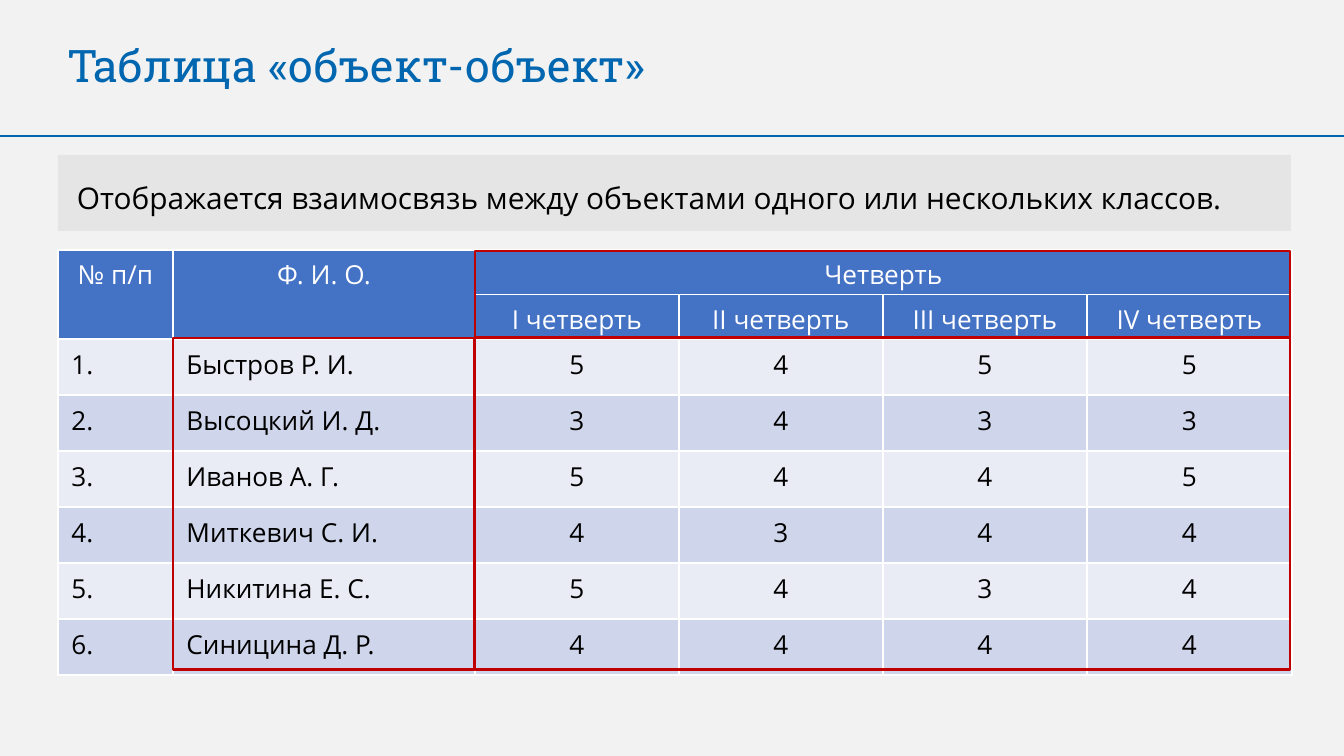
import pptx
import pptx.dml.color
import pptx.enum.shapes
import pptx.enum.text
import pptx.oxml
import pptx.oxml.ns
import pptx.util

EMU_PER_PX = 914400 / 134.4
COLORS = {
    "background": "F2F2F2",
    "accent": "0066B0",
    "note": "D9D9D9",
    "header": "4472C4",
    "odd": "E9EBF5",
    "even": "CFD5EA",
    "frame": "C00000",
    "white": "FFFFFF",
    "black": "000000",
}
ALIGN = pptx.enum.text.PP_ALIGN
RECTANGLE = pptx.enum.shapes.MSO_SHAPE.RECTANGLE


def px(*lengths):
    return [pptx.util.Emu(round(length * EMU_PER_PX)) for length in lengths]


def write(paragraph, text, font_name, size, color, align=ALIGN.LEFT):
    paragraph.text = text
    paragraph.alignment = align
    paragraph.font.name = font_name
    paragraph.font.size = pptx.util.Pt(size)
    paragraph.font.color.rgb = pptx.dml.color.RGBColor.from_string(COLORS[color])


prs = pptx.Presentation()
prs.slide_width, prs.slide_height = px(1344, 756)
slide = prs.slides.add_slide(prs.slide_layouts[5])
slide.background.fill.solid()
slide.background.fill.fore_color.rgb = pptx.dml.color.RGBColor.from_string(COLORS["background"])

title = slide.shapes.title
title.left, title.top, title.width, title.height = px(54, 31, 1236, 67)
title.text_frame.vertical_anchor = pptx.enum.text.MSO_ANCHOR.TOP
write(title.text_frame.paragraphs[0], "Таблица «объект-объект»", "Roboto Slab", 24, "accent")

divider = slide.shapes.add_connector(
    pptx.enum.shapes.MSO_CONNECTOR.STRAIGHT, *px(0, 136, 1344, 136))
divider.line.color.rgb = pptx.dml.color.RGBColor.from_string(COLORS["accent"])
divider.line.width = pptx.util.Pt(1)
divider._element.spPr.append(pptx.oxml.parse_xml(
    f'<a:effectLst {pptx.oxml.ns.nsdecls("a")}/>'))

note = slide.shapes.add_shape(RECTANGLE, *px(58, 155, 1233, 76))
note.shadow.inherit = False
note.line.fill.background()
note.fill.solid()
note.fill.fore_color.rgb = pptx.dml.color.RGBColor.from_string(COLORS["note"])
note._element.spPr.find(".//" + pptx.oxml.ns.qn("a:srgbClr")).append(
    pptx.oxml.parse_xml(f'<a:alpha {pptx.oxml.ns.nsdecls("a")} val="50000"/>'))
note_text = note.text_frame
note_text.word_wrap = True
note_text.vertical_anchor = pptx.enum.text.MSO_ANCHOR.TOP
note_text.margin_left, note_text.margin_top, note_text.margin_right, note_text.margin_bottom = px(
    19, 19, 19, 19)
write(note_text.paragraphs[0],
      "Отображается взаимосвязь между объектами одного или нескольких классов.",
      "Open Sans", 16, "black")
note_text.paragraphs[0].line_spacing = pptx.util.Pt(22)

students = [
    ("Быстров Р. И.", "5455"),
    ("Высоцкий И. Д.", "3433"),
    ("Иванов А. Г.", "5445"),
    ("Миткевич С. И.", "4344"),
    ("Никитина Е. С.", "5434"),
    ("Синицина Д. Р.", "4444"),
]
grade_rows = [
    ["№ п/п", "Ф. И. О.", "Четверть", "", "", ""],
    ["", ""] + [f"{quarter} четверть" for quarter in ("I", "II", "III", "IV")],
]
for number, (student, grades) in enumerate(students, 1):
    grade_rows.append([f"{number}.", student, *grades])

column_widths = [115, 302, 204, 204, 204, 205]
row_heights = [44] * 2 + [56] * 6
journal = slide.shapes.add_table(
    len(row_heights), len(column_widths),
    *px(58, 250, sum(column_widths), sum(row_heights))).table
for column, width in zip(journal.columns, px(*column_widths)):
    column.width = width
for row, height in zip(journal.rows, px(*row_heights)):
    row.height = height

for r, values in enumerate(grade_rows):
    is_header = r < 2
    band = "header" if is_header else ("odd", "even")[r % 2]
    for c, value in enumerate(values):
        cell = journal.cell(r, c)
        cell.margin_top, cell.margin_bottom = px(7, 2)
        write(cell.text_frame.paragraphs[0], value, "Open Sans", 14,
              "white" if is_header else "black",
              ALIGN.CENTER if is_header or c > 1 else ALIGN.LEFT)
        for side in ("lnL", "lnR", "lnT", "lnB"):
            cell._tc.get_or_add_tcPr().append(pptx.oxml.parse_xml(
                f'<a:{side} {pptx.oxml.ns.nsdecls("a")} w="12700"><a:solidFill>'
                f'<a:srgbClr val="{COLORS["white"]}"/></a:solidFill></a:{side}>'))
        cell.fill.solid()
        cell.fill.fore_color.rgb = pptx.dml.color.RGBColor.from_string(COLORS[band])

for top, left, bottom, right in [(0, 0, 1, 0), (0, 1, 1, 1), (0, 2, 0, 5)]:
    journal.cell(top, left).merge(journal.cell(bottom, right))

for bounds in [(173, 338, 302, 332), (475, 251, 815, 87), (475, 338, 815, 332)]:
    class_frame = slide.shapes.add_shape(RECTANGLE, *px(*bounds))
    class_frame.shadow.inherit = False
    class_frame.fill.background()
    class_frame.line.color.rgb = pptx.dml.color.RGBColor.from_string(COLORS["frame"])
    class_frame.line.width = pptx.util.Pt(1.5)

prs.save("out.pptx")
